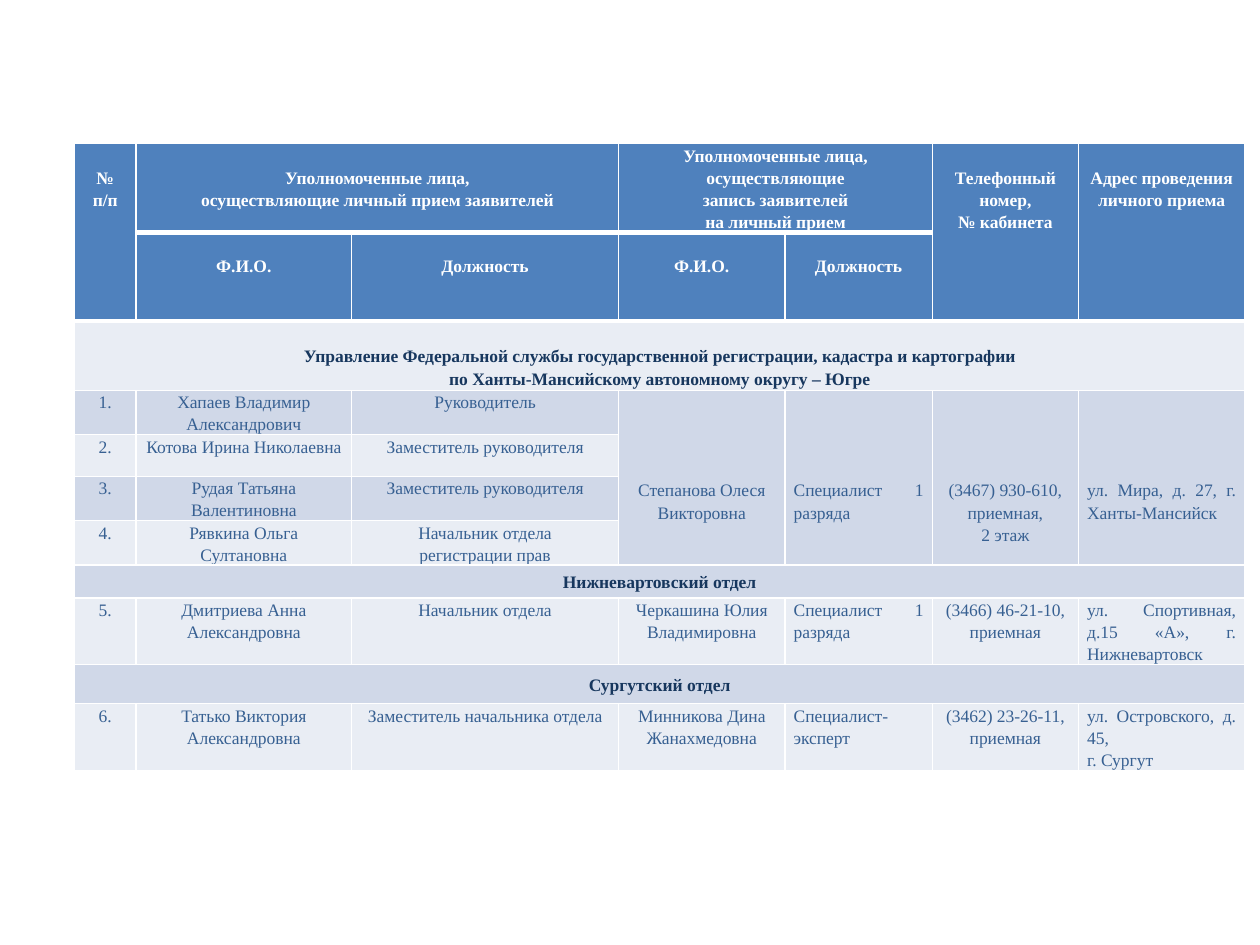
from lxml import etree
from pptx import Presentation
from pptx import util as u
from pptx.dml.color import RGBColor
from pptx.enum import text
from pptx.oxml import ns

WHITE = RGBColor(0xFF, 0xFF, 0xFF)
HEADER_BLUE = RGBColor(0x4F, 0x81, 0xBD)
BAND_LIGHT = RGBColor(0xE9, 0xED, 0xF4)
BAND_DARK = RGBColor(0xD0, 0xD8, 0xE8)
SECTION_TEXT = RGBColor(0x17, 0x37, 0x5E)
BODY_TEXT = RGBColor(0x37, 0x60, 0x92)

FONT = "Times New Roman"
LINE = u.Pt(12.6)  # height of one text line
COLUMNS = [0.49, 1.71, 2.12, 1.32, 1.17, 1.16, 1.32]
ROWS = [0.69, 0.68, 0.55, 0.35, 0.33, 0.35, 0.35, 0.26, 0.53, 0.31, 0.53]
HEADER_ROWS = (0, 1)
SECTION_ROWS = (2, 7, 9)
JUSTIFIED_COLUMNS = (4, 6)

# None marks a cell covered by a merged neighbour.
CONTENT = [
    ["№ п/п", "Уполномоченные лица,\nосуществляющие личный прием заявителей", None,
     "Уполномоченные лица, осуществляющие\nзапись заявителей\nна личный прием", None,
     "Телефонный номер,\n№ кабинета", "Адрес проведения личного приема"],
    [None, "Ф.И.О.", "Должность", "Ф.И.О.", "Должность", None, None],
    ["Управление Федеральной службы государственной регистрации, кадастра и картографии\n"
     "по Ханты-Мансийскому автономному округу – Югре"] + [None] * 6,
    ["1.", "Хапаев Владимир Александрович", "Руководитель", "Степанова Олеся Викторовна",
     "Специалист 1 разряда", "(3467) 930-610,\nприемная,\n2 этаж",
     "ул. Мира, д. 27, г. Ханты-Мансийск"],
    ["2.", "Котова Ирина Николаевна", "Заместитель руководителя"] + [None] * 4,
    ["3.", "Рудая Татьяна Валентиновна", "Заместитель руководителя"] + [None] * 4,
    ["4.", "Рявкина Ольга Султановна", "Начальник отдела\nрегистрации прав"] + [None] * 4,
    ["Нижневартовский отдел"] + [None] * 6,
    ["5.", "Дмитриева Анна Александровна", "Начальник отдела", "Черкашина Юлия Владимировна",
     "Специалист 1 разряда", "(3466) 46-21-10,\nприемная",
     "ул. Спортивная, д.15 «А», г. Нижневартовск"],
    ["Сургутский отдел"] + [None] * 6,
    ["6.", "Татько Виктория Александровна", "Заместитель начальника отдела",
     "Минникова Дина Жанахмедовна", "Специалист-эксперт", "(3462) 23-26-11, приемная",
     "ул. Островского, д. 45,\nг. Сургут"],
]

# First and last cell of each merged block, as (row, column).
MERGES = ([((0, column), (1, column)) for column in (0, 5, 6)]
          + [((0, column), (0, column + 1)) for column in (1, 3)]
          + [((row, 0), (row, 6)) for row in SECTION_ROWS]
          + [((3, column), (6, column)) for column in range(3, 7)])


def set_borders(cell, row):
    """White rules, thick below each header row."""
    top = 3 if row - 1 in HEADER_ROWS else 1
    bottom = 3 if row in HEADER_ROWS else 1
    properties = cell._tc.get_or_add_tcPr()
    for side, width in (("L", 1), ("R", 1), ("T", top), ("B", bottom)):
        line = etree.SubElement(properties, ns.qn(f"a:ln{side}"), w=str(u.Pt(width)))
        fill = etree.SubElement(line, ns.qn("a:solidFill"))
        etree.SubElement(fill, ns.qn("a:srgbClr"), val=str(WHITE))


def lines_above(row, column):
    """Number of text lines left free above the text of a cell."""
    if row == 0:
        return 0 if column == 3 else 1
    if row == 3 and column >= 3:
        return 4
    return 1 if row in (1, 2) else 0


def format_cell(cell, row, column):
    header, section = row in HEADER_ROWS, row in SECTION_ROWS
    set_borders(cell, row)
    cell.fill.solid()
    band = BAND_DARK if row % 2 else BAND_LIGHT
    cell.fill.fore_color.rgb = HEADER_BLUE if header else band
    cell.margin_left = cell.margin_right = u.Inches(0.07)
    cell.margin_top = lines_above(row, column) * LINE
    cell.margin_bottom = 0
    cell.vertical_anchor = text.MSO_ANCHOR.MIDDLE if section else text.MSO_ANCHOR.TOP
    justified = column in JUSTIFIED_COLUMNS and not header
    for paragraph in cell.text_frame.paragraphs:
        paragraph.alignment = text.PP_ALIGN.JUSTIFY if justified else text.PP_ALIGN.CENTER
        paragraph.line_spacing = 1.15
        font = paragraph.font
        font.size = u.Pt(10)
        for run in paragraph.runs:
            run.font.name = FONT
            run.font.size = u.Pt(10)
            run.font.bold = header or section
            run.font.color.rgb = WHITE if header else SECTION_TEXT if section else BODY_TEXT


def add_reception_table(slide, left, top):
    frame = slide.shapes.add_table(len(ROWS), len(COLUMNS), left, top,
                                   u.Inches(sum(COLUMNS)), u.Inches(sum(ROWS)))
    table = frame.table
    for column, width in zip(table.columns, COLUMNS):
        column.width = u.Inches(width)
    for row, height in zip(table.rows, ROWS):
        row.height = u.Inches(height)
    for first, last in MERGES:
        table.cell(*first).merge(table.cell(*last))
    for row, values in enumerate(CONTENT):
        for column, value in enumerate(values):
            cell = table.cell(row, column)
            if value:
                cell.text_frame.text = value
            format_cell(cell, row, column)


def main():
    presentation = Presentation()
    presentation.slide_width = u.Inches(10)
    presentation.slide_height = u.Inches(7.5)
    slide = presentation.slides.add_slide(presentation.slide_layouts[6])
    add_reception_table(slide, u.Inches(0.59), u.Inches(1.14))
    presentation.save("out.pptx")


if __name__ == "__main__":
    main()
